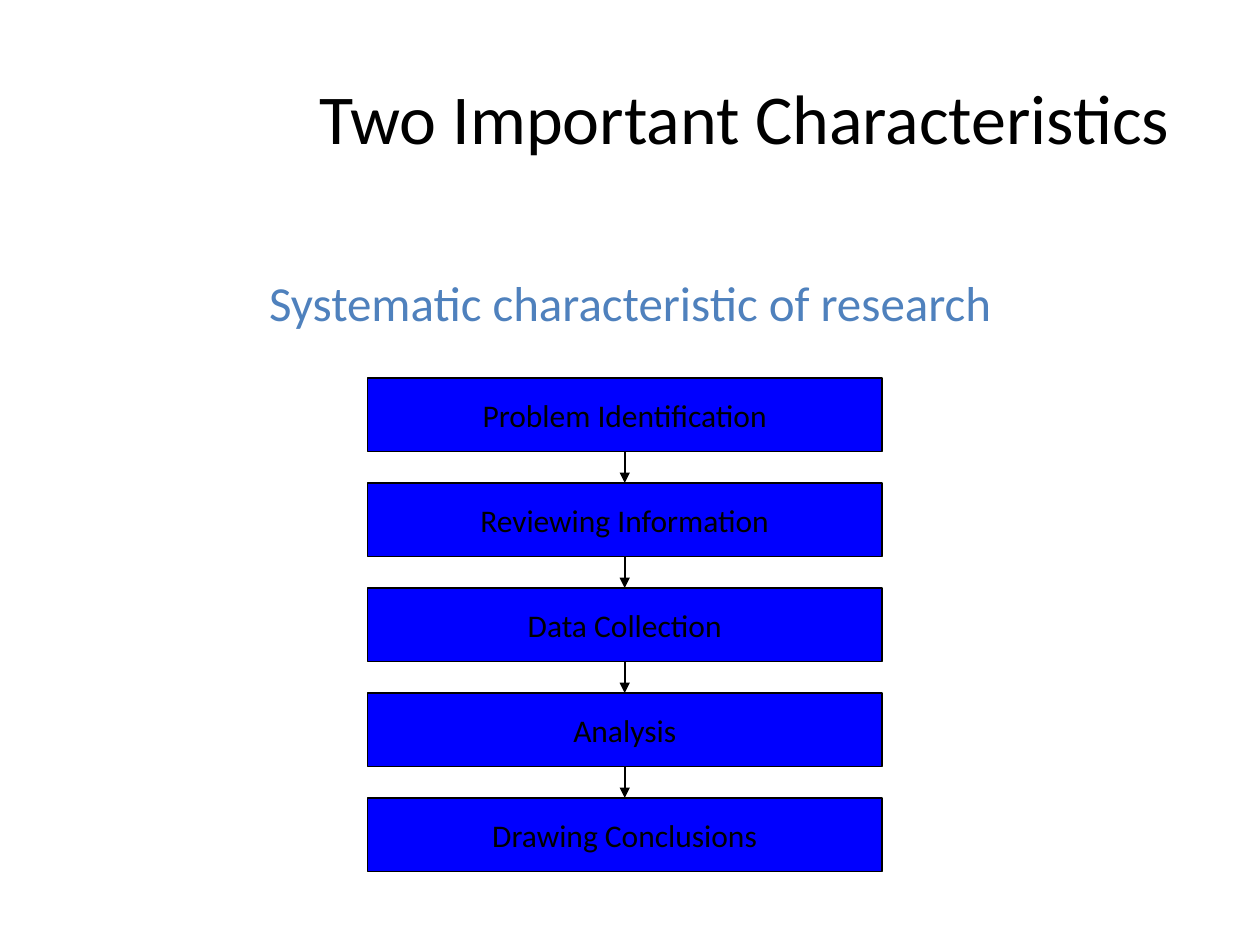
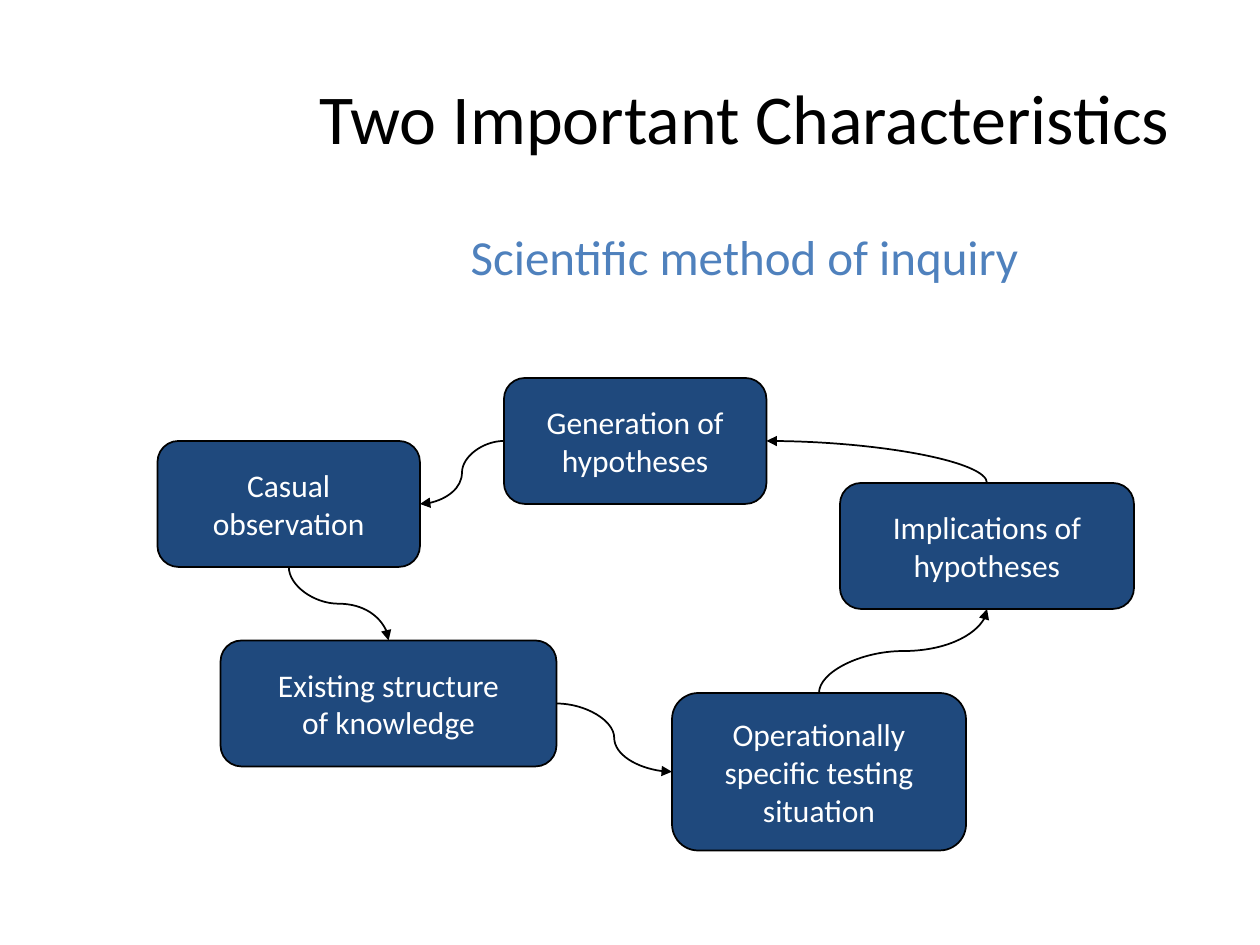
from pptx import Presentation
from pptx.dml.color import RGBColor
from pptx.enum.shapes import MSO_CONNECTOR, MSO_SHAPE
from pptx.enum.text import MSO_ANCHOR, MSO_AUTO_SIZE, PP_ALIGN
from pptx.oxml.ns import qn
from pptx.util import Emu, Pt
from lxml.etree import SubElement

BLACK, WHITE, ACCENT = "000000", "FFFFFF", "4F81BD"
BLUE, NAVY = "0000FF", "1F497D"
FONT = "Calibri"
TITLE = "Two Important Characteristics"
TOP, LEFT, BOTTOM, RIGHT = range(4)

STEPS = ["Problem Identification", "Reviewing Information", "Data Collection",
         "Analysis", "Drawing Conclusions"]
NODES = {
    "Generation of\nhypotheses": (330, 0, 250, 120),
    "Implications of\nhypotheses": (650, 100, 280, 120),
    "Operationally\nspecific testing\nsituation": (490, 300, 280, 150),
    "Existing structure\nof knowledge": (60, 250, 320, 120),
    "Casual\nobservation": (0, 60, 250, 120),
}
LINKS = [(0, LEFT, 4, RIGHT), (4, BOTTOM, 3, TOP), (3, RIGHT, 2, LEFT),
         (2, TOP, 1, BOTTOM), (1, TOP, 0, RIGHT)]


def px(n):
    return Emu(n * 7620)


def tint(code):
    return RGBColor.from_string(code)


def put(item, **values):
    for name, value in values.items():
        setattr(item, name, value)


def place(shape, box):
    put(shape, **dict(zip(("left", "top", "width", "height"), map(px, box))))


def write(shape, text, size, color, **frame):
    shape.text_frame.text = text
    put(shape.text_frame, **frame)
    for para in shape.text_frame.paragraphs:
        put(para, alignment=PP_ALIGN.CENTER)
        put(para.font, name=FONT, size=Pt(size))
        para.font.color.rgb = tint(color)


def start(deck, lead, box, space):
    slide = deck.slides.add_slide(deck.slide_layouts[1])
    title, body = slide.placeholders
    place(title, (278, 36, 862, 150))
    write(title, TITLE, 40, BLACK, vertical_anchor=MSO_ANCHOR.MIDDLE,
          auto_size=MSO_AUTO_SIZE.NONE)
    place(body, box)
    body.text_frame.text = lead
    para = body.text_frame.paragraphs[0]
    props = para._p.get_or_add_pPr()
    put(para, line_spacing=space, space_before=Pt(0))
    props.set("marL", "0")
    props.set("indent", "0")
    SubElement(props, qn("a:buNone"))
    put(body.text_frame, auto_size=MSO_AUTO_SIZE.NONE)
    put(para, alignment=PP_ALIGN.CENTER)
    put(para.font, name=FONT, size=Pt(28))
    para.font.color.rgb = tint(ACCENT)
    return slide


def stroke(item):
    item.line.color.rgb = tint(BLACK)
    item.line.width = Pt(1)


def node(slide, kind, box, text, fill, color):
    shape = slide.shapes.add_shape(kind, *map(px, box))
    shape.shadow.inherit = False
    shape.fill.solid()
    shape.fill.fore_color.rgb = tint(fill)
    stroke(shape)
    write(shape, text, 18, color, word_wrap=False,
          vertical_anchor=MSO_ANCHOR.MIDDLE)
    return shape


def arrow(slide, kind, first, side, last, end):
    line = slide.shapes.add_connector(kind, 0, 0, 0, 0)
    line.begin_connect(first, side)
    line.end_connect(last, end)
    stroke(line)
    SubElement(line.line._get_or_add_ln(), qn("a:tailEnd"), type="triangle")
    SubElement(line._element.spPr, qn("a:effectLst"))
    return line


def curve(slide, first, side, last, end):
    line = arrow(slide, MSO_CONNECTOR.CURVE, first, side, last, end)
    if side in (LEFT, RIGHT):
        return
    across = line.end_x - line.begin_x
    down = line.end_y - line.begin_y
    wide, high = abs(down), abs(across)
    mid_x = (line.begin_x + line.end_x) // 2
    mid_y = (line.begin_y + line.end_y) // 2
    put(line, left=mid_x - wide // 2, top=mid_y - high // 2,
        width=wide, height=high)
    frame = line._element.spPr.find(qn("a:xfrm"))
    frame.set("rot", str(270 * 60000))
    frame.set("flipH", str(int(down > 0)))
    frame.set("flipV", str(int(across < 0)))
    if end in (LEFT, RIGHT):
        shape = line._element.spPr.find(qn("a:prstGeom"))
        shape.set("prst", "curvedConnector2")


def chain(slide, box):
    left, top, width, height = box
    pitch = 100
    tall = height - pitch * (len(STEPS) - 1)
    steps = [node(slide, MSO_SHAPE.FLOWCHART_PROCESS,
                  (left, top + pitch * row, width, tall), text, BLUE, BLACK)
             for row, text in enumerate(STEPS)]
    for first, last in zip(steps, steps[1:]):
        arrow(slide, MSO_CONNECTOR.STRAIGHT, first, BOTTOM, last, TOP)


def cycle(slide, left, top):
    nodes = [node(slide, MSO_SHAPE.FLOWCHART_ALTERNATE_PROCESS,
                  (left + x, top + y, width, height), text, NAVY, WHITE)
             for text, (x, y, width, height) in NODES.items()]
    for first, side, last, end in LINKS:
        curve(slide, nodes[first], side, nodes[last], end)


def main():
    deck = Presentation()
    put(deck, slide_width=px(1200), slide_height=px(900))
    slide = start(deck, "Systematic characteristic of research",
                  (90, 260, 1020, 80), 0.9)
    chain(slide, (350, 360, 490, 470))
    slide = start(deck, "Scientific method of inquiry",
                  (278, 210, 862, 594), 1.0)
    cycle(slide, 150, 360)
    deck.save("out.pptx")


if __name__ == "__main__":
    main()
